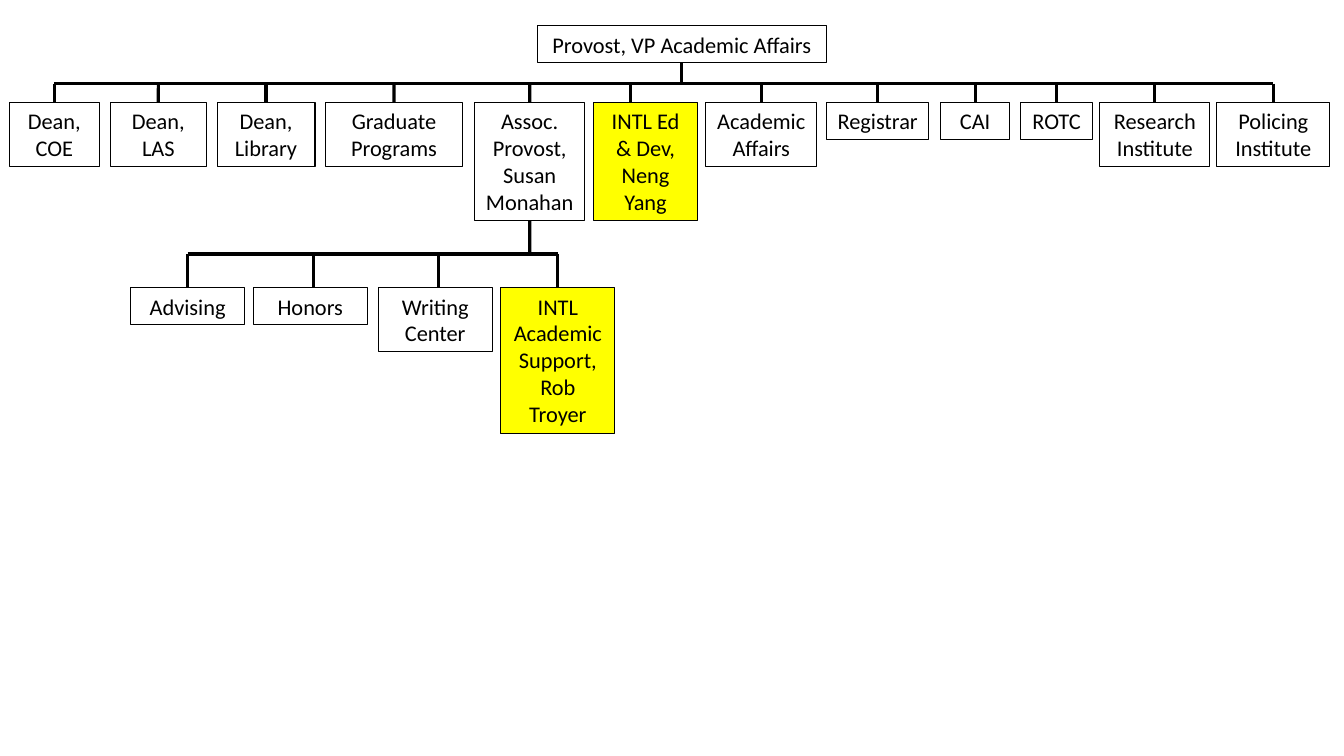
from dataclasses import dataclass

from lxml.etree import SubElement
from pptx import Presentation
from pptx.dml.color import RGBColor
from pptx.enum.shapes import MSO_CONNECTOR, MSO_SHAPE
from pptx.enum.text import MSO_ANCHOR, MSO_AUTO_SIZE, PP_ALIGN
from pptx.oxml.ns import qn
from pptx.shapes.autoshape import Shape
from pptx.shapes.connector import Connector
from pptx.slide import Slide
from pptx.util import Cm, Pt

FONT, FONT_SIZE = "Calibri", 16
BLACK, YELLOW = "000000", "FFFF00"
LINE_HEIGHT, PADDING = 0.685, 0.25
TOP_SIDE, BOTTOM_SIDE = 0, 2


@dataclass
class Unit:
    """A box of the chart, in cm; drop is set when its stem is off centre."""
    text: str
    left: float
    width: float
    lines: int = 1
    fill: str | None = None
    drop: float | None = None

    @property
    def stem_x(self) -> float:
        return self.left + self.width / 2 if self.drop is None else self.drop


PROVOST = Unit("Provost, VP Academic Affairs", 13.54, 7.29)
ASSOC_PROVOST = Unit("Assoc. Provost, Susan Monahan", 11.96, 2.78, 4)
DIVISIONS = [
    Unit("Dean, COE", 0.24, 2.26, 2),
    Unit("Dean, LAS", 2.78, 2.42, 2),
    Unit("Dean, Library", 5.47, 2.47, 2),
    Unit("Graduate\nPrograms", 8.2, 3.46, 2),
    ASSOC_PROVOST,
    Unit("INTL Ed & Dev, Neng Yang", 14.96, 2.62, 4, YELLOW, 15.9),
    Unit("Academic Affairs", 17.79, 2.79, 2),
    Unit("Registrar", 20.83, 2.58),
    Unit("CAI", 23.7, 1.75),
    Unit("ROTC", 25.72, 1.82),
    Unit("Research Institute", 27.72, 2.77, 2),
    Unit("Policing Institute", 30.67, 2.84, 2),
]
SUPPORT_WIDTH = 2.88
SUPPORT_UNITS = [
    Unit("Advising", 3.29, SUPPORT_WIDTH),
    Unit("Honors", 6.38, SUPPORT_WIDTH, drop=7.9),
    Unit("Writing Center", 9.53, SUPPORT_WIDTH, 2, drop=11.05),
    Unit("INTL Academic Support, Rob Troyer", 12.62, SUPPORT_WIDTH, 5, YELLOW),
]


def color(value: str) -> RGBColor:
    return RGBColor.from_string(value)


def add_box(s: Slide, unit: Unit, top: float) -> Shape:
    height = PADDING + LINE_HEIGHT * unit.lines
    sp = s.shapes.add_shape(MSO_SHAPE.RECTANGLE, Cm(unit.left), Cm(top),
                            Cm(unit.width), Cm(height))
    sp.shadow.inherit = False
    sp.line.color.rgb = color(BLACK)
    sp.line.width = Pt(0.75)
    if unit.fill:
        sp.fill.solid()
        sp.fill.fore_color.rgb = color(unit.fill)
    else:
        sp.fill.background()
    tf = sp.text_frame
    tf.word_wrap = True
    tf.auto_size = MSO_AUTO_SIZE.SHAPE_TO_FIT_TEXT
    tf.vertical_anchor = MSO_ANCHOR.TOP
    for i, text in enumerate(unit.text.split("\n")):
        p = tf.add_paragraph() if i else tf.paragraphs[0]
        p.alignment = PP_ALIGN.CENTER
        r = p.add_run()
        r.text = text
        r.font.name = FONT
        r.font.size = Pt(FONT_SIZE)
        r.font.color.rgb = color(BLACK)
    return sp


def add_line(s: Slide, x1: float, y1: float, x2: float, y2: float) -> Connector:
    line = s.shapes.add_connector(MSO_CONNECTOR.STRAIGHT,
                                  Cm(x1), Cm(y1), Cm(x2), Cm(y2))
    line.line.color.rgb = color(BLACK)
    line.line.width = Pt(2.25)
    SubElement(line._element.spPr, qn("a:effectLst"))
    return line


def add_branch(s: Slide, parent: Unit, parent_sp: Shape, bar_y: float,
               units: list[Unit], top: float) -> list[Shape]:
    """Draw a row of boxes hanging from a bar under its parent box."""
    # Trunk and bar
    trunk = add_line(s, parent.stem_x, bar_y, parent.stem_x, bar_y)
    trunk.begin_connect(parent_sp, BOTTOM_SIDE)
    add_line(s, units[0].stem_x, bar_y, units[-1].stem_x, bar_y)

    # Boxes and their stems
    boxes = []
    for unit in units:
        sp = add_box(s, unit, top)
        stem = add_line(s, unit.stem_x, bar_y, unit.stem_x, top)
        if unit.drop is None:
            stem.end_connect(sp, TOP_SIDE)
        boxes.append(sp)
    return boxes


def main() -> None:
    prs = Presentation()
    prs.slide_width, prs.slide_height = Cm(33.87), Cm(19.05)
    s = prs.slides.add_slide(prs.slide_layouts[6])

    # Provost and divisions
    provost_sp = add_box(s, PROVOST, 0.65)
    divisions = add_branch(s, PROVOST, provost_sp, 2.11, DIVISIONS, 2.58)

    # Units under the associate provost
    assoc_sp = divisions[DIVISIONS.index(ASSOC_PROVOST)]
    add_branch(s, ASSOC_PROVOST, assoc_sp, 6.4, SUPPORT_UNITS, 7.25)

    prs.save("out.pptx")


if __name__ == "__main__":
    main()
